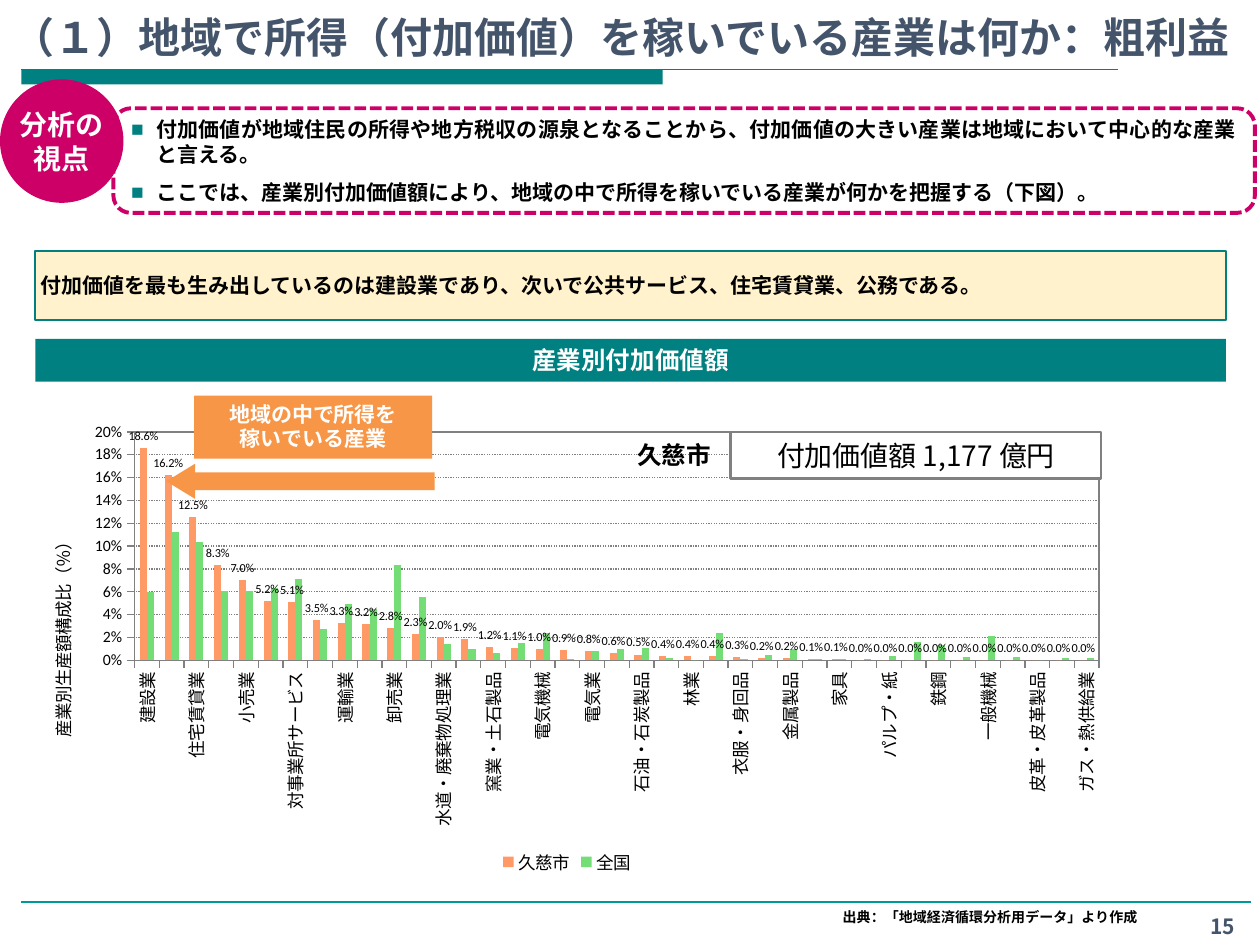
from lxml.etree import SubElement
from pptx import Presentation
from pptx.chart.data import CategoryChartData
from pptx.dml.color import RGBColor
from pptx.enum.chart import XL_CHART_TYPE as ChartType, XL_LABEL_POSITION as LabelPosition
from pptx.enum.chart import XL_LEGEND_POSITION as LegendPosition, XL_TICK_MARK as TickMark
from pptx.enum.dml import MSO_LINE_DASH_STYLE as Dash
from pptx.enum.shapes import MSO_CONNECTOR as Connector, MSO_SHAPE as Shape
from pptx.enum.text import MSO_ANCHOR as Anchor, MSO_AUTO_SIZE as AutoSize, PP_ALIGN as Align
from pptx.oxml.ns import qn
from pptx.util import Pt

PX = 9144  # EMU; 100 px to the inch
FONT = "Noto Sans CJK JP"
TEAL, MAGENTA, ORANGE, SLATE = "008080", "CC0066", "F79646", "44546A"
BLACK, WHITE, GRAY = "000000", "FFFFFF", "808080"

INDUSTRIES = (
    "建設業 公共サービス 住宅賃貸業 公務 小売業 対個人サービス 対事業所サービス 食料品 運輸業 "
    "金融・保険業 卸売業 情報通信業 水道・廃棄物処理業 農業 窯業・土石製品 その他の不動産業 "
    "電気機械 水産業 電気業 その他の製造業 石油・石炭製品 製材・木製品 林業 輸送用機械 "
    "衣服・身回品 印刷 金属製品 鉱業 家具 繊維 パルプ・紙 化学 鉄鋼 非鉄金属 一般機械 "
    "精密機械 皮革・皮革製品 ゴム製品 ガス・熱供給業").split()
# Shares in tenths of a percent
CITY = [186, 162, 125, 83, 70, 52, 51, 35, 33, 32, 28, 23, 20, 19, 12, 11, 10, 9, 8, 6,
        5, 4, 4, 4, 3, 2, 2, 1, 1] + [0] * 10
NATION = [60, 112, 104, 61, 61, 63, 71, 27, 49, 45, 83, 55, 14, 10, 6, 15, 24, 1, 8, 10,
          11, 2, 0, 24, 1, 5, 10, 1, 1, 1, 4, 16, 13, 3, 21, 3, 0, 2, 2]


def rgb(value):
    return RGBColor.from_string(value)


def emu(*lengths):
    return [length * PX for length in lengths]


def within(box, left, top, width, height):
    """Turn a box relative to another into one relative to the slide."""
    return box[0] + left, box[1] + top, width, height


def style(para, size, color, bold=True, align=Align.LEFT):
    para.alignment = align
    font = para.font
    font.size, font.bold = Pt(size), bold
    font.color.rgb = rgb(color)
    font.name = FONT
    SubElement(para._p.pPr.find(qn("a:defRPr")), qn("a:ea"), typeface=FONT)


def write(shape, text, size, color, bold=True, align=Align.LEFT, anchor=Anchor.TOP,
          wrap=True, narrow=False):
    frame = shape.text_frame
    frame.text = text
    frame.word_wrap, frame.vertical_anchor = wrap, anchor
    frame.auto_size = AutoSize.NONE
    if narrow:
        frame.margin_left = frame.margin_right = 4 * PX
    for para in frame.paragraphs:
        style(para, size, color, bold, align)
    return frame


def add_block(page, box, kind=Shape.RECTANGLE, fill=None, line=None, width=1):
    block = page.shapes.add_shape(kind, *emu(*box))
    block.shadow.inherit = False
    if fill:
        block.fill.solid()
        block.fill.fore_color.rgb = rgb(fill)
    else:
        block.fill.background()
    if line:
        block.line.color.rgb = rgb(line)
        block.line.width = Pt(width)
    else:
        block.line.fill.background()
    return block


def add_label(page, box, text, size, color=BLACK, **options):
    return write(page.shapes.add_textbox(*emu(*box)), text, size, color, **options)


def add_rule(page, left, right, top, color):
    rule = page.shapes.add_connector(Connector.STRAIGHT, *emu(left, top, right, top))
    rule.line.color.rgb = rgb(color)
    rule.line.width = Pt(0.75)
    SubElement(rule._element.spPr, qn("a:effectLst"))


def place(shape, box):
    shape.left, shape.top, shape.width, shape.height = emu(*box)


def add_header(page, box):
    title = page.shapes.title
    place(title, within(box, 0, 0, box[2], 54))
    write(title, "（１）地域で所得（付加価値）を稼いでいる産業は何か：粗利益", 24, SLATE,
          anchor=Anchor.BOTTOM)
    add_block(page, within(box, 17, 55, 509, 12), fill=TEAL)
    add_rule(page, box[0] + 17, box[0] + 887, box[1] + 55, TEAL)


def add_bullet(para):
    properties = para._p.get_or_add_pPr()
    properties.set("marL", str(20 * PX))
    properties.set("indent", str(-20 * PX))
    color = SubElement(properties, qn("a:buClr"))
    SubElement(color, qn("a:srgbClr"), val=TEAL)
    SubElement(properties, qn("a:buChar"), char="■")


def add_viewpoint(page, box):
    frame_box = within(box, 90, 23, 906, 83)
    outline = add_block(page, frame_box, Shape.ROUNDED_RECTANGLE, line=MAGENTA, width=2.25)
    outline.line.dash_style = Dash.SQUARE_DOT

    body = page.placeholders[1]
    place(body, within(frame_box, 4, 0, 898, 83))
    frame = body.text_frame
    frame.text = (
        "付加価値が地域住民の所得や地方税収の源泉となることから、付加価値の大きい産業は地域において中心的な産業と言える。\n"
        "ここでは、産業別付加価値額により、地域の中で所得を稼いでいる産業が何かを把握する（下図）。")
    frame.vertical_anchor, frame.auto_size = Anchor.MIDDLE, AutoSize.NONE
    for number, para in enumerate(frame.paragraphs):
        para.space_before, para.space_after = Pt(3 if number else 0), Pt(4)
        add_bullet(para)
        style(para, 12, BLACK, align=Align.JUSTIFY)

    badge = add_block(page, within(box, 0, 0, 98, 98), Shape.OVAL, fill=MAGENTA)
    write(badge, "分析の\v視点", 16, WHITE, align=Align.CENTER, anchor=Anchor.MIDDLE,
          wrap=False, narrow=True)


def add_finding(page, box):
    finding = add_block(page, within(box, 0, 0, box[2], 55), fill="FFF2CC", line=TEAL)
    write(finding, "付加価値を最も生み出しているのは建設業であり、次いで公共サービス、住宅賃貸業、公務である。",
          12, BLACK, align=Align.JUSTIFY, anchor=Anchor.MIDDLE, narrow=True)
    heading = add_block(page, within(box, 0, 70, box[2], 34), fill=TEAL)
    write(heading, "産業別付加価値額", 14, WHITE, align=Align.CENTER)


def set_layout(parent, **values):
    """Give a chart part a manual place, in fractions of the chart."""
    layout = parent.find(qn("c:layout"))
    if layout is None:
        layout = SubElement(parent, qn("c:layout"))
        parent.insert(0, layout)
    manual = SubElement(layout, qn("c:manualLayout"))
    if "w" in values:
        SubElement(manual, qn("c:layoutTarget"), val="inner")
    for side in "xy":
        SubElement(manual, qn(f"c:{side}Mode"), val="edge")
    for name, value in values.items():
        SubElement(manual, qn(f"c:{name}"), val=str(value))


def turn_upward(body):
    body.set("rot", "-5400000")
    body.set("vert", "horz")


def add_share_chart(page, box):
    data = CategoryChartData(number_format="0.0%")
    data.categories = INDUSTRIES
    for name, shares in (("久慈市", CITY), ("全国", NATION)):
        data.add_series(name, [share / 1000 for share in shares])
    chart = page.shapes.add_chart(ChartType.COLUMN_CLUSTERED, *emu(*box), data).chart
    chart.has_title = False
    chart.font.size, chart.font.name = Pt(10), "Calibri"
    chart.font.color.rgb = rgb(BLACK)
    chart.has_legend = True
    chart.legend.position = LegendPosition.BOTTOM
    chart.legend.include_in_layout = False

    plot = chart.plots[0]
    plot.gap_width, plot.overlap, plot.vary_by_categories = 150, 0, False
    for series, color in zip(plot.series, ("FF9966", "75DD75")):
        series.format.fill.solid()
        series.format.fill.fore_color.rgb = rgb(color)
    labels = plot.series[0].data_labels
    labels.show_value, labels.position = True, LabelPosition.OUTSIDE_END
    labels.number_format, labels.number_format_is_linked = "0.0%", False
    labels.font.size = Pt(7)

    shares, industries = chart.value_axis, chart.category_axis
    for axis in (shares, industries):
        axis.major_tick_mark, axis.minor_tick_mark = TickMark.OUTSIDE, TickMark.NONE
        axis.format.line.color.rgb = rgb(GRAY)
    shares.minimum_scale, shares.maximum_scale, shares.major_unit = 0, 0.2, 0.02
    shares.tick_labels.number_format = "0%"
    shares.tick_labels.number_format_is_linked = False
    shares.tick_labels.font.size = Pt(9)
    grid = shares.major_gridlines.format.line
    grid.color.rgb, grid.width, grid.dash_style = rgb(GRAY), Pt(0.75), Dash.ROUND_DOT

    title = shares.axis_title
    title.text_frame.text = "産業別生産額構成比（％）"
    title_font = title.text_frame.paragraphs[0].font
    title_font.size, title_font.bold = Pt(10), False
    turn_upward(title.text_frame._txBody.bodyPr)
    set_layout(title._element, x=0.03, y=0.25)

    industries.tick_labels.font.size = Pt(10)
    axis_xml = industries._element
    turn_upward(axis_xml.find(qn("c:txPr")).find(qn("a:bodyPr")))
    skip = SubElement(axis_xml, qn("c:tickLblSkip"), val="2")
    axis_xml.find(qn("c:noMultiLvlLbl")).addprevious(skip)

    area = chart._chartSpace.chart.plotArea
    set_layout(area, x=0.11, y=0.04, w=0.87, h=0.49)
    border = SubElement(SubElement(area, qn("c:spPr")), qn("a:ln"), w="9525")
    SubElement(SubElement(border, qn("a:solidFill")), qn("a:srgbClr"), val=GRAY)


def add_chart_region(page, box):
    add_share_chart(page, within(box, 0, 14, 880, 370))
    callout = add_block(page, within(box, 144, 0, 189, 50), fill=ORANGE)
    frame = write(callout, "地域の中で所得を\n稼いでいる産業", 12, WHITE, align=Align.CENTER)
    for para in frame.paragraphs:
        para.line_spacing = Pt(14)
    arrow = add_block(page, within(box, 122, 54, 213, 28), Shape.LEFT_ARROW, fill=ORANGE)
    arrow.adjustments[1] = 0.82
    total = add_block(page, within(box, 570, 29, 294, 37), fill=WHITE, line=GRAY, width=1.5)
    write(total, "付加価値額 1,177 億円", 16, BLACK, bold=False, align=Align.CENTER)
    add_label(page, within(box, 486, 30, 79, 34), "久慈市", 14, wrap=False)


def add_footer(page, box):
    add_rule(page, box[0] + 17, box[0] + 993, box[1], "009999")
    add_label(page, within(box, 659, 0, 257, 24), "出典：「地域経済循環分析用データ」より作成", 8)
    add_label(page, within(box, 941, 4, 59, 28), "15", 12, SLATE, align=Align.CENTER)


def main():
    deck = Presentation()
    deck.slide_width, deck.slide_height = emu(1000, 750)
    page = deck.slides.add_slide(deck.slide_layouts[1])
    add_header(page, (0, 0, 1000, 67))
    add_viewpoint(page, (0, 63, 996, 106))
    add_finding(page, (28, 199, 945, 104))
    add_chart_region(page, (10, 314, 880, 384))
    add_footer(page, (0, 716, 1000, 34))
    deck.save("out.pptx")


if __name__ == "__main__":
    main()
